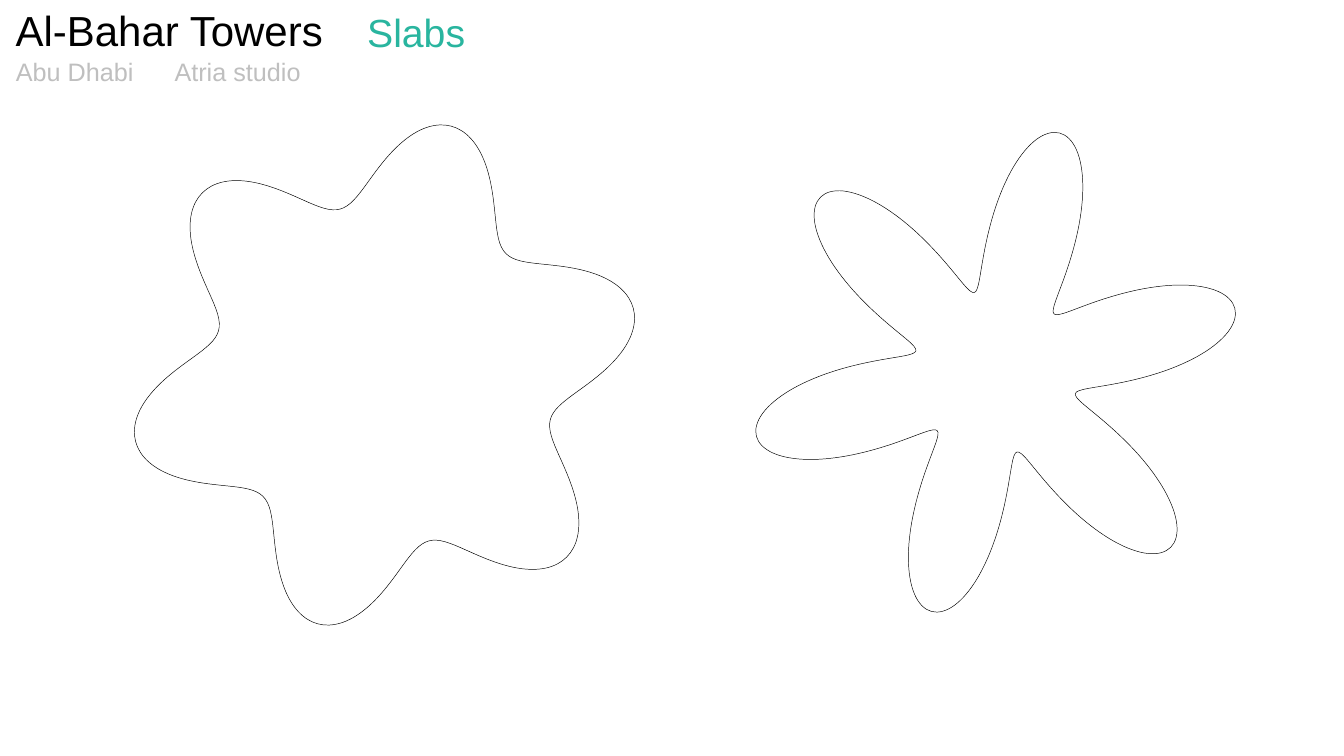
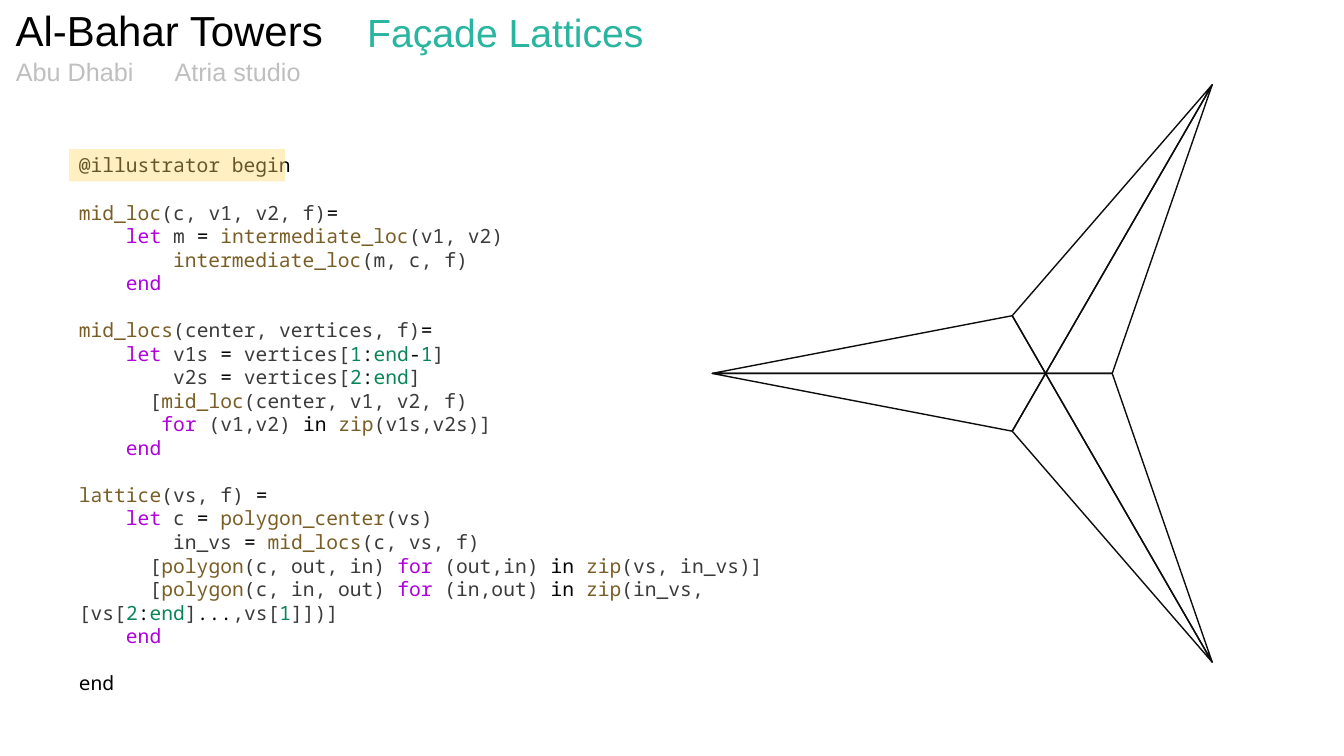
from math import cos, radians, sin

from lxml import etree
from pptx import Presentation
from pptx.dml.color import RGBColor
from pptx.enum.shapes import MSO_SHAPE
from pptx.enum.text import MSO_ANCHOR, MSO_AUTO_SIZE, PP_ALIGN
from pptx.oxml.ns import qn
from pptx.util import Cm, Pt

COLORS = {
    "heading": "000000",
    "section": "29B59F",
    "muted": "BFBFBF",
    "outline": "000000",
    "lattice": "0D0D0D",
    "highlight": "FFD966",
}
CODE_COLORS = {
    "text": "3B3B3B",
    "op": "000000",
    "fn": "795E26",
    "key": "AF00DB",
    "num": "098658",
}
HEADING_FONT = "Arial"
CODE_FONT = "Noto Sans Mono"

# Each line holds "kind:text" pieces, joined by "|".
LATTICE_CODE = [
    "op:@illustrator begin",
    "",
    "fn:mid_loc|text:(c, v1, v2, f)|op:=",
    "key:    let|text: m |op:= |fn:intermediate_loc|text:(v1, v2)",
    "fn:        intermediate_loc|text:(m, c, f)",
    "key:    end",
    "",
    "fn:mid_locs|text:(center, vertices, f)|op:=",
    "key:    let|text: v1s |op:=|text: vertices[|num:1|op::|num:end|op:-|num:1|text:]",
    "text:        v2s |op:=|text: vertices[|num:2|op::|num:end|text:]",
    "text:      [|fn:mid_loc|text:(center, v1, v2, f)",
    "key:       for|text: (v1,v2) |op:in |fn:zip|text:(v1s,v2s)]",
    "key:    end",
    "",
    "fn:lattice|text:(vs, f) |op:=",
    "key:    let|text: c |op:= |fn:polygon_center|text:(vs)",
    "text:        in_vs |op:= |fn:mid_locs|text:(c, vs, f)",
    "text:      [|fn:polygon|text:(c, out, in) |key:for|text: (out,in) "
    "|op:in |fn:zip|text:(vs, in_vs)]",
    "text:      [|fn:polygon|text:(c, in, out) |key:for|text: (in,out) "
    "|op:in |fn:zip|text:(in_vs, [vs[|num:2|op::|num:end|text:]|op:..."
    "|text:,vs[|num:1|text:]])]",
    "key:    end",
    "",
    "op:end",
]


def rgb(value):
    return RGBColor.from_string(value)


def place(sp, left, top, width, height):
    sp.left, sp.top, sp.width, sp.height = map(Cm, (left, top, width, height))


def set_heading(sp, text, size, color, align=PP_ALIGN.LEFT):
    tf = sp.text_frame
    tf.text = text
    tf.word_wrap = True
    tf.auto_size = MSO_AUTO_SIZE.NONE
    tf.vertical_anchor = MSO_ANCHOR.TOP
    p = tf.paragraphs[0]
    p.alignment = align
    font = p.runs[0].font
    font.name, font.size = HEADING_FONT, Pt(size)
    font.color.rgb = rgb(COLORS[color])


def add_header(s, section):
    """Place the section title and the project name, city and studio."""
    place(s.shapes.title, 9, 0.08, 9.45, 1.45)
    set_heading(s.shapes.title, section, 28, "section")
    labels = [
        ("Al-Bahar Towers", (0.03, 0, 8.36, 1.55), 30, "heading", PP_ALIGN.RIGHT),
        ("Atria studio", (4.15, 1.3, 5.44, 1.02), 18, "muted", PP_ALIGN.LEFT),
        ("Abu Dhabi", (0.15, 1.3, 4.01, 1.02), 18, "muted", PP_ALIGN.LEFT),
    ]
    for text, box, size, color, align in labels:
        sp = s.shapes.add_textbox(*map(Cm, box))
        set_heading(sp, text, size, color, align)


def polar(cx, cy, radius, degrees):
    """Return the point at an angle counted anticlockwise from the right."""
    angle = radians(degrees)
    return Cm(cx + radius * cos(angle)), Cm(cy - radius * sin(angle))


def add_outline(s, points, color, width):
    builder = s.shapes.build_freeform(*points[0], scale=1.0)
    builder.add_line_segments(points[1:], close=True)
    sp = builder.convert_to_shape()
    sp.shadow.inherit = False
    sp.fill.background()
    sp.line.color.rgb = rgb(COLORS[color])
    sp.line.width = Pt(width)
    return sp


def curve_outline(sp):
    """Turn every three line segments of a freeform into one Bézier curve."""
    lines = list(sp._element.iter(qn("a:lnTo")))
    for first, second, third in zip(lines[::3], lines[1::3], lines[2::3]):
        first.tag = qn("a:cubicBezTo")
        for line in (second, third):
            first.append(line[0])
            line.getparent().remove(line)


def add_slab(s, cx, cy, radius, wave, petals=6, turn=15, curves=72):
    """Draw a circle whose radius swings by the share `wave` once per petal."""
    step = 360 / curves

    def point_and_tangent(degrees):
        angle = radians(degrees)
        phase = petals * radians(degrees - turn)
        r = radius * (1 + wave * cos(phase))
        slope = -radius * wave * petals * sin(phase)
        x, y = cx + r * cos(angle), cy - r * sin(angle)
        dx = slope * cos(angle) - r * sin(angle)
        dy = -slope * sin(angle) - r * cos(angle)
        third = radians(step) / 3
        return x, y, dx * third, dy * third

    knots = [point_and_tangent(i * step) for i in range(curves + 1)]
    points = [knots[0][:2]]
    for (x0, y0, dx0, dy0), (x1, y1, dx1, dy1) in zip(knots, knots[1:]):
        points += [(x0 + dx0, y0 + dy0), (x1 - dx1, y1 - dy1), (x1, y1)]
    points = [(Cm(x), Cm(y)) for x, y in points]
    curve_outline(add_outline(s, points, "outline", 0.34))


def add_lattice(s, cx, cy, radius, ratio):
    """Draw six triangles between three outer tips and three inner corners."""
    center = Cm(cx), Cm(cy)
    for tip in (60, 180, 300):
        for corner in (tip - 60, tip + 60):
            points = [
                center,
                polar(cx, cy, radius, tip),
                polar(cx, cy, radius * ratio, corner),
            ]
            add_outline(s, points, "lattice", 1)


def add_code(s, lines, left, top, width, height):
    tf = s.shapes.add_textbox(*map(Cm, (left, top, width, height))).text_frame
    tf.word_wrap = True
    for i, line in enumerate(lines):
        p = tf.add_paragraph() if i else tf.paragraphs[0]
        p.line_spacing = Pt(16.8)
        p.font.name, p.font.size = CODE_FONT, Pt(14)
        for piece in filter(None, line.split("|")):
            kind, text = piece.split(":", 1)
            r = p.add_run()
            r.text = text
            r.font.name, r.font.size = CODE_FONT, Pt(14)
            r.font.color.rgb = rgb(CODE_COLORS[kind])


def add_highlight(s, left, top, width, height, opacity=40):
    box = map(Cm, (left, top, width, height))
    sp = s.shapes.add_shape(MSO_SHAPE.RECTANGLE, *box)
    sp.shadow.inherit = False
    sp.line.fill.background()
    sp.fill.solid()
    sp.fill.fore_color.rgb = rgb(COLORS["highlight"])
    color = sp._element.spPr.find(qn("a:solidFill"))[0]
    etree.SubElement(color, qn("a:alpha"), val=str(opacity * 1000))


def new_slide(prs, section):
    s = prs.slides.add_slide(prs.slide_layouts[5])
    add_header(s, section)
    return s


def build_slabs(prs):
    s = new_slide(prs, "Slabs")
    add_slab(s, 25.09, 9.38, 4.16, 0.5)
    add_slab(s, 9.69, 9.45, 5.41, 0.2)


def build_lattices(prs):
    s = new_slide(prs, "Façade Lattices")
    left, top = 1.74, 3.74
    add_code(s, LATTICE_CODE, left, top, 22, 13.41)
    add_highlight(s, left, top + 0.02, 5.44, 0.81)
    add_lattice(s, 26.35, 9.41, 8.4, 0.2)


def main():
    prs = Presentation()
    prs.slide_width, prs.slide_height = Cm(33.87), Cm(19.05)
    build_slabs(prs)
    build_lattices(prs)
    prs.save("out.pptx")


if __name__ == "__main__":
    main()
